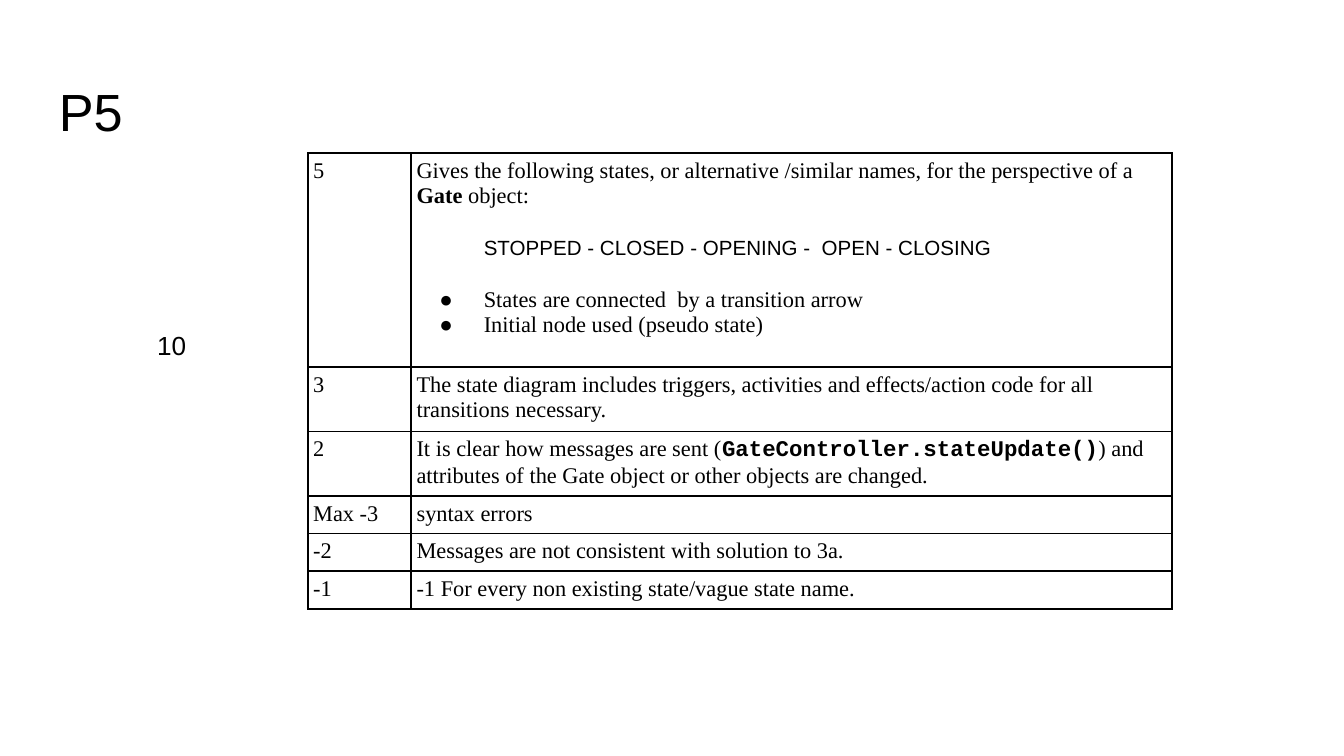
from lxml.etree import SubElement
from pptx import Presentation
from pptx.dml.color import RGBColor
from pptx.enum.text import MSO_ANCHOR
from pptx.oxml.ns import qn
from pptx.util import Inches, Pt

COLORS = {"ink": "000000", "page": "FFFFFF"}
SERIF, SANS, MONO = "Times New Roman", "Arial", "Courier New"

deck = Presentation()
deck.slide_width = Inches(10)
deck.slide_height = deck.slide_width * 9 // 16
slide = deck.slides.add_slide(deck.slide_layouts[6])


def add_run(paragraph, text, size=12, font=SERIF, bold=False):
    run = paragraph.add_run()
    run.text = text
    run.font.size, run.font.name, run.font.bold = Pt(size), font, bold
    run.font.color.rgb = RGBColor.from_string(COLORS["ink"])


def add_line(parent, tag, width):
    line = SubElement(parent, qn(tag), w=str(Pt(width)))
    fill = SubElement(line, qn("a:solidFill"))
    SubElement(fill, qn("a:srgbClr"), val=COLORS["ink"])


# Page background
background = slide.background.fill
background.solid()
background.fore_color.rgb = RGBColor.from_string(COLORS["page"])

# Heading and total points: left, top, width, height, text, size
for left, top, width, height, text, size in (
    (0.34, 0.49, 1.61, 0.63, "P5", 28),
    (1.07, 2.35, 0.45, 0.66, "10", 14),
):
    label = slide.shapes.add_textbox(*map(Inches, (left, top, width, height)))
    frame = label.text_frame
    frame.word_wrap = True
    frame.vertical_anchor = MSO_ANCHOR.TOP
    frame.margin_left = frame.margin_right = Inches(0.1)
    frame.margin_top, frame.margin_bottom = Inches(0.1), Inches(0.05)
    add_run(frame.paragraphs[0], text, size, SANS)

# Rubric: points, then paragraphs made of runs
rubric = [
    ("5", [
        [("Gives the following states, or alternative /similar names, "
          "for the perspective of a ",), ("Gate ", 12, SERIF, True), ("object:",)],
        [("STOPPED - CLOSED - OPENING -  OPEN - CLOSING", 11, SANS)],
        [("States are connected  by a transition arrow",)],
        [("Initial node used (pseudo state)",)],
    ]),
    ("3", [[("The state diagram includes triggers, activities and "
             "effects/action code for all transitions necessary.",)]]),
    ("2", [[("It is clear how messages are sent (",),
            ("GateController.stateUpdate()", 12, MONO, True),
            (") and attributes of the Gate object or other objects "
             "are changed.",)]]),
    ("Max -3", [[("syntax errors",)]]),
    ("-2", [[("Messages are not consistent with solution to 3a.",)]]),
    ("-1", [[("-1 For every non existing state/vague state name.",)]]),
]
column_widths = (0.77, 5.66)
rubric_frame = slide.shapes.add_table(
    len(rubric), len(column_widths), Inches(2.29), Inches(1.14),
    Inches(sum(column_widths)), Inches(3.28))
rubric_table = rubric_frame.table
rubric_table.first_row = rubric_table.horz_banding = False
for column, width in zip(rubric_table.columns, column_widths):
    column.width = Inches(width)

for row, (points, criteria) in enumerate(rubric):
    # Only the first row is taller than its text
    rubric_table.rows[row].height = Inches(1.59 if row == 0 else 0)
    for column, paragraphs in enumerate(([[(points,)]], criteria)):
        cell = rubric_table.cell(row, column)
        cell.margin_left = cell.margin_right = Inches(0.04)
        cell.margin_top = cell.margin_bottom = Inches(0.04)
        for side in ("a:lnL", "a:lnR", "a:lnT", "a:lnB"):
            add_line(cell._tc.get_or_add_tcPr(), side, 1)
        cell.fill.background()
        for index, runs in enumerate(paragraphs):
            frame = cell.text_frame
            paragraph = frame.paragraphs[0] if index == 0 else frame.add_paragraph()
            for run in runs:
                add_run(paragraph, *run)
rubric_frame.height = Inches(3.28)

# State list: indented names, then bullets
intro, state_names, *bullets = rubric_table.cell(0, 1).text_frame.paragraphs
intro.space_after = Pt(13.4)
state_names.line_spacing = 1.15
state_names.space_after = Pt(14.9)
state_names._p.get_or_add_pPr().set("marL", str(Inches(0.5)))
for bullet in bullets:
    properties = bullet._p.get_or_add_pPr()
    properties.set("marL", str(Inches(0.5)))
    properties.set("indent", str(Inches(-0.33)))
    bullet_color = SubElement(properties, qn("a:buClr"))
    SubElement(bullet_color, qn("a:srgbClr"), val=COLORS["ink"])
    SubElement(properties, qn("a:buFont"), typeface=SERIF)
    SubElement(properties, qn("a:buChar"), char="●")

deck.save("out.pptx")
